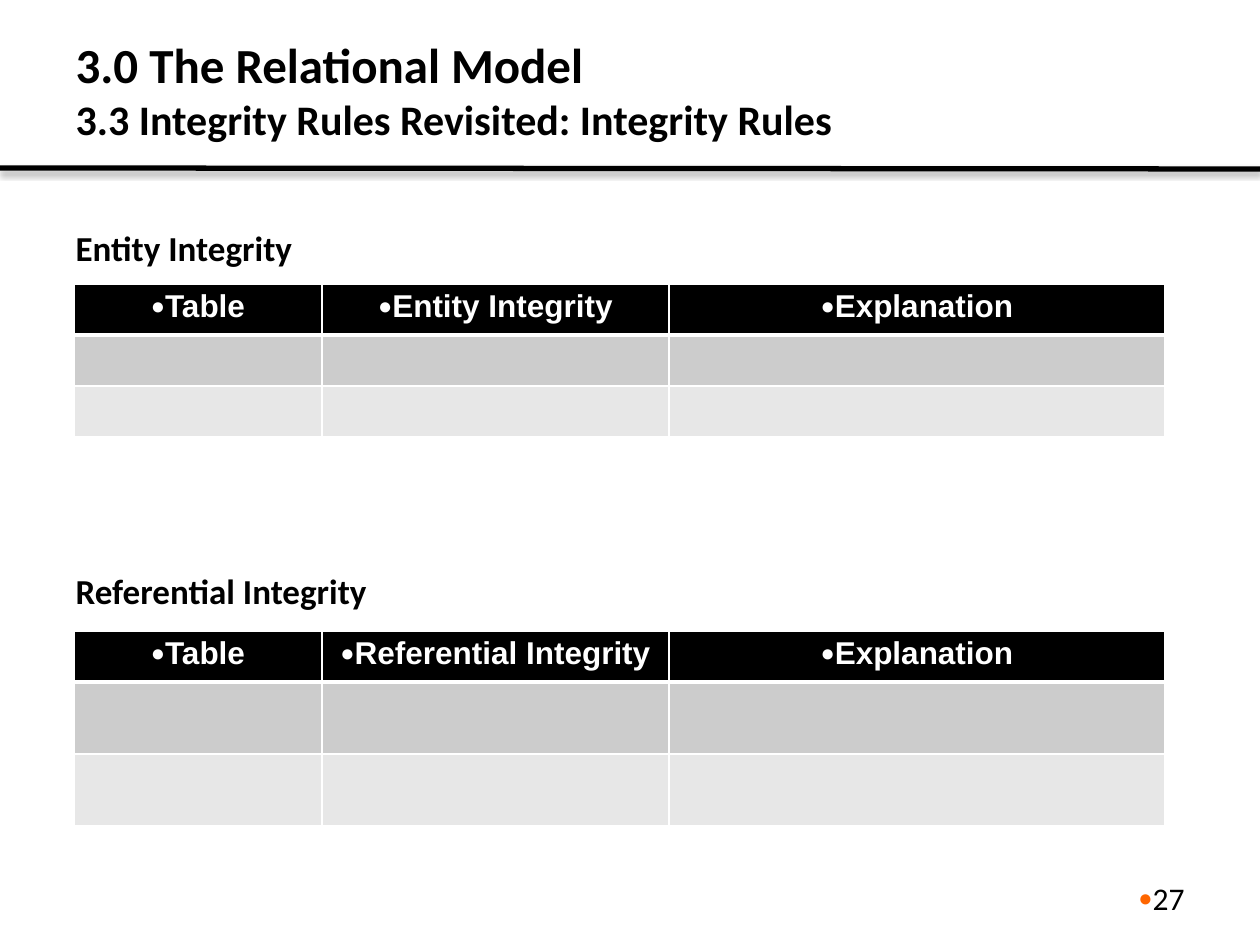
from lxml.etree import SubElement
from pptx import Presentation
from pptx.dml.color import RGBColor
from pptx.enum.shapes import MSO_CONNECTOR
from pptx.enum.text import MSO_ANCHOR, MSO_AUTO_SIZE, PP_ALIGN
from pptx.oxml.ns import qn
from pptx.util import Emu, Pt

EMU_PER_PX = 914400 / 126
BLACK = RGBColor(0x00, 0x00, 0x00)
WHITE = RGBColor(0xFF, 0xFF, 0xFF)
ORANGE = RGBColor(0xFF, 0x66, 0x00)
DARK_BAND = RGBColor(0xCC, 0xCC, 0xCC)
LIGHT_BAND = RGBColor(0xE7, 0xE7, 0xE7)


def px(length):
    return Emu(round(length * EMU_PER_PX))


def add_element(parent, tag, **attributes):
    return SubElement(parent, qn(tag), {key: str(value) for key, value in attributes.items()})


class SlideBuilder:
    heading_font = "Calibri"
    table_font = "Arial"

    def __init__(self, presentation):
        self.slide = presentation.slides.add_slide(presentation.slide_layouts[1])

    def style(self, font, name, size, color, bold=False):
        font.name, font.size, font.bold = name, Pt(size), bold
        font.color.rgb = color

    def bullet(self, paragraph, color, size=75):
        properties = paragraph._p.get_or_add_pPr()
        properties.set("marL", "0")
        properties.set("indent", "0")
        bullet_color = add_element(properties, "a:buClr")
        add_element(bullet_color, "a:srgbClr", val=color)
        add_element(properties, "a:buSzPct", val=size * 1000)
        add_element(properties, "a:buFont", typeface=self.table_font)
        add_element(properties, "a:buChar", char="●")

    def place(self, shape, left, top, width, height):
        shape.left, shape.top = px(left), px(top)
        shape.width, shape.height = px(width), px(height)
        shape.text_frame.auto_size = MSO_AUTO_SIZE.NONE
        shape.text_frame.word_wrap = True

    def rule(self, start, end, weight):
        line = self.slide.shapes.add_connector(
            MSO_CONNECTOR.STRAIGHT, *map(px, start), *map(px, end))
        line.line.color.rgb = BLACK
        line.line.width = Pt(weight)
        effects = add_element(line._element.spPr, "a:effectLst")
        shadow = add_element(effects, "a:outerShdw", blurRad=Pt(3.1), dist=Pt(1.8),
                             dir=90 * 60000, rotWithShape=0)
        color = add_element(shadow, "a:srgbClr", val=BLACK)
        add_element(color, "a:alpha", val=35000)

    def title(self, lines, sizes, box):
        shape = self.slide.shapes.title
        self.place(shape, *box)
        shape.text_frame.vertical_anchor = MSO_ANCHOR.MIDDLE
        shape.text_frame.text = "\v".join(lines)
        paragraph = shape.text_frame.paragraphs[0]
        paragraph.alignment = PP_ALIGN.LEFT
        for run, size in zip(paragraph.runs, sizes):
            self.style(run.font, self.heading_font, size, BLACK, True)

    def body(self, headings, gap, box):
        shape = self.slide.placeholders[1]
        self.place(shape, *box)
        shape.text_frame.text = "\n".join(headings)
        for index, paragraph in enumerate(shape.text_frame.paragraphs):
            properties = paragraph._p.get_or_add_pPr()
            properties.set("marL", str(px(48)))
            properties.set("indent", str(-px(48)))
            paragraph.space_before = Pt(gap if index else 0)
            add_element(properties, "a:buNone")
            self.style(paragraph.runs[0].font, self.heading_font, 20, BLACK, True)

    def page_number(self, number, box):
        shape = self.slide.shapes.add_textbox(0, 0, 0, 0)
        self.place(shape, *box)
        shape.text_frame.text = number
        paragraph = shape.text_frame.paragraphs[0]
        paragraph.alignment = PP_ALIGN.RIGHT
        self.bullet(paragraph, ORANGE)
        self.style(paragraph.runs[0].font, self.heading_font, 18, BLACK)

    def borders(self, cell, top, bottom):
        properties = cell._tc.get_or_add_tcPr()
        for tag, weight in (("a:lnL", 1), ("a:lnR", 1), ("a:lnT", top), ("a:lnB", bottom)):
            line = add_element(properties, tag, w=Pt(weight))
            fill = add_element(line, "a:solidFill")
            add_element(fill, "a:srgbClr", val=WHITE)

    def header_cell(self, cell, text):
        cell.margin_left = cell.margin_right = px(9)
        cell.margin_top = cell.margin_bottom = 0
        cell.text_frame.text = text
        paragraph = cell.text_frame.paragraphs[0]
        paragraph.alignment = PP_ALIGN.CENTER
        paragraph.line_spacing = 1.15
        self.bullet(paragraph, WHITE)
        self.style(paragraph.runs[0].font, self.table_font, 18, WHITE, True)

    def table(self, headers, left, top, widths, heights):
        table = self.slide.shapes.add_table(
            len(heights), len(widths), px(left), px(top),
            px(sum(widths)), px(sum(heights))).table
        for column, width in zip(table.columns, widths):
            column.width = px(width)
        for row_index, (row, height) in enumerate(zip(table.rows, heights)):
            row.height = px(height)
            for cell, header in zip(row.cells, headers):
                if row_index == 0:
                    self.header_cell(cell, header)
                self.borders(cell, 3 if row_index == 1 else 1, 3 if row_index == 0 else 1)
                cell.fill.solid()
                cell.fill.fore_color.rgb = (BLACK, DARK_BAND, LIGHT_BAND)[row_index]


def main():
    presentation = Presentation()
    presentation.slide_width, presentation.slide_height = px(1260), px(945)
    builder = SlideBuilder(presentation)

    # Heading and divider
    builder.rule((0, 168), (1260, 169), 3)
    builder.title(["3.0 The Relational Model", "3.3 Integrity Rules Revisited: Integrity Rules"],
                  (28, 24), (63, 21, 1134, 136))

    # Section headings, each followed by its table
    rules = ["Entity Integrity", "Referential Integrity"]
    builder.body(rules, 172, (63, 220, 1134, 628))
    for rule, top, band_height in zip(rules, (284, 631), (51, 72)):
        builder.table(["Table", rule, "Explanation"], 74, top,
                      (248, 347, 496), (51, band_height, band_height))

    # Page number
    builder.page_number("27", (924, 873, 273, 50))
    presentation.save("out.pptx")


if __name__ == "__main__":
    main()
